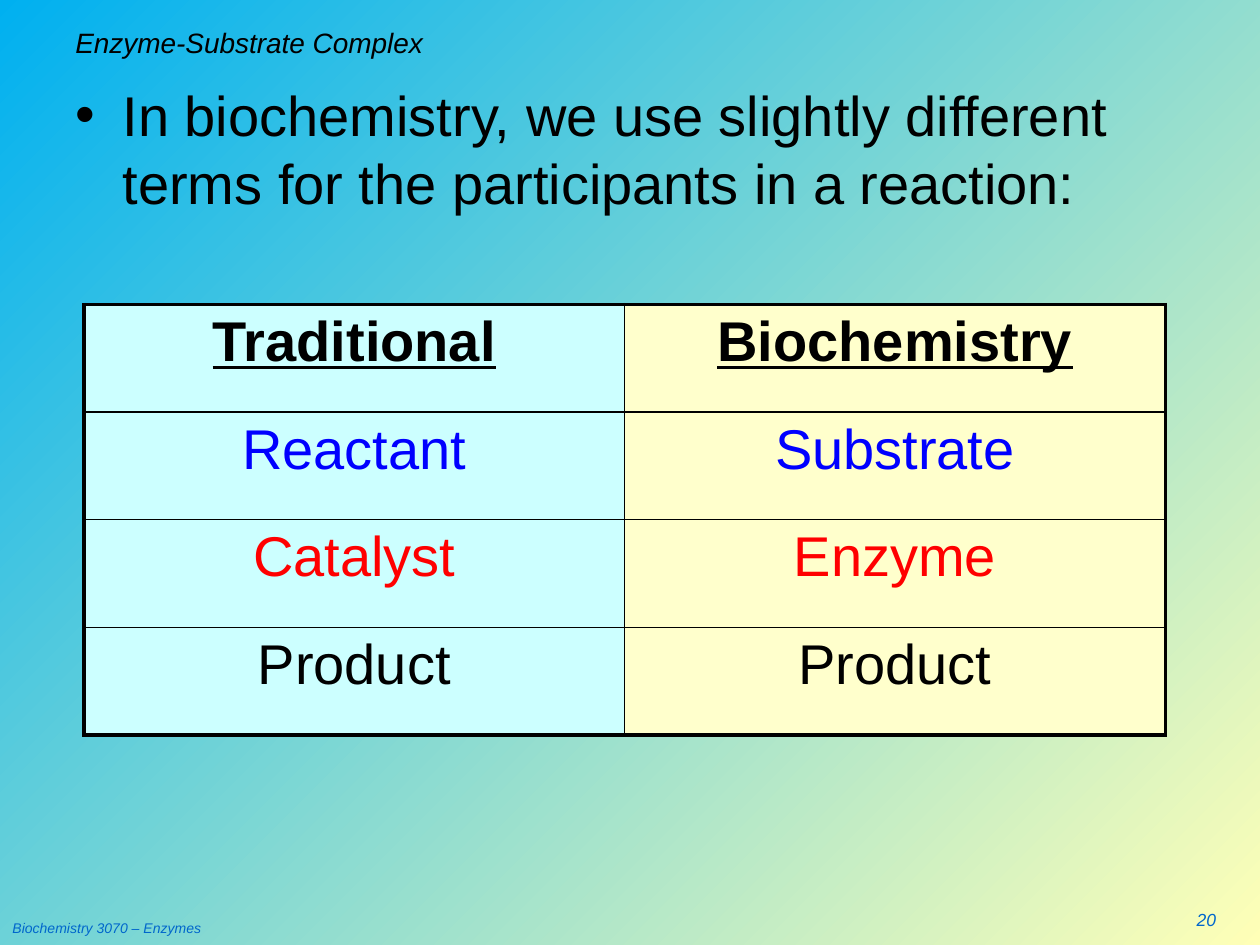
from lxml.etree import SubElement
from pptx import Presentation
from pptx.dml.color import RGBColor
from pptx.enum.text import MSO_ANCHOR as Anchor, PP_ALIGN as Align
from pptx.oxml.ns import qn
from pptx.util import Pt

BLACK, BLUE, RED, FOOTER_BLUE = "000000", "0000FF", "FF0000", "0066CC"
COLUMN_FILLS = ["CCFFFF", "FFFFCC"]
TERMS = [
    ("Traditional", "Biochemistry", BLACK),
    ("Reactant", "Substrate", BLUE),
    ("Catalyst", "Enzyme", RED),
    ("Product", "Product", BLACK),
]
OUTER_LINE, INNER_LINE = 2.25, 1


def color(hex_string):
    return RGBColor.from_string(hex_string)


def style_font(para, size, hex_string, italic=False, bold=False, underline=False):
    for span in para.runs:
        font = span.font
        font.name, font.size = "Arial", Pt(size)
        font.italic, font.bold, font.underline = italic, bold, underline
        font.color.rgb = color(hex_string)


def add_text(page, box, text, size, hex_string, italic=False,
             align=Align.LEFT, anchor=Anchor.TOP):
    frame = page.shapes.add_textbox(*map(Pt, box)).text_frame
    frame.word_wrap = True
    frame.vertical_anchor = anchor
    frame.text = text
    para = frame.paragraphs[0]
    para.alignment = align
    style_font(para, size, hex_string, italic)
    return para


def paint_background(page):
    fill = page.background.fill
    fill.gradient()
    fill.gradient_angle = 315
    for stop, position, shade in zip(fill.gradient_stops, (0, 1), ("00B0F0", "FFFFB7")):
        stop.position = position
        stop.color.rgb = color(shade)


def add_bullet(page, box, text):
    para = add_text(page, box, text, 32, BLACK)
    para.line_spacing = Pt(39)
    properties = para._p.get_or_add_pPr()
    properties.set("marL", str(Pt(27)))
    properties.set("indent", str(Pt(-27)))
    SubElement(properties, qn("a:buFont"), typeface="Arial")
    SubElement(properties, qn("a:buChar"), char="•")


def set_borders(cell, widths):
    """Draw the left, right, top and bottom borders, in that order, before the fill."""
    properties = cell._tc.get_or_add_tcPr()
    for side, width in zip("LRTB", widths):
        line = SubElement(properties, qn(f"a:ln{side}"), w=str(Pt(width)))
        SubElement(SubElement(line, qn("a:solidFill")), qn("a:srgbClr"), val=BLACK)


def add_terms_table(page, box):
    last_row, last_column = len(TERMS) - 1, len(COLUMN_FILLS) - 1
    table = page.shapes.add_table(last_row + 1, last_column + 1, *map(Pt, box)).table
    for row, (*words, text_color) in enumerate(TERMS):
        for column, word in enumerate(words):
            cell = table.cell(row, column)
            edges = (column == 0, column == last_column, row == 0, row == last_row)
            set_borders(cell, [OUTER_LINE if edge else INNER_LINE for edge in edges])
            cell.fill.solid()
            cell.fill.fore_color.rgb = color(COLUMN_FILLS[column])
            cell.text_frame.text = word
            para = cell.text_frame.paragraphs[0]
            para.alignment = Align.CENTER
            header = row == 0
            style_font(para, 32, text_color, bold=header, underline=header)


def add_footer(page, box, text, number):
    left, top, width, height = box
    add_text(page, (left, top + 6, 228, height - 6), text, 8, FOOTER_BLUE, italic=True)
    add_text(page, (left + width - 42, top, 42, height), number, 10, FOOTER_BLUE,
             italic=True, align=Align.RIGHT)


def main():
    deck = Presentation()
    deck.slide_width, deck.slide_height = Pt(720), Pt(540)
    page = deck.slides.add_slide(deck.slide_layouts[6])
    paint_background(page)
    add_footer(page, (0, 516, 702, 24), "Biochemistry 3070 – Enzymes", "20")
    add_text(page, (36, 12, 648, 24), "Enzyme-Substrate Complex", 16, BLACK,
             italic=True, anchor=Anchor.MIDDLE)
    add_bullet(page, (36, 42, 660, 440),
               "In biochemistry, we use slightly different terms "
               "for the participants in a reaction:")
    add_terms_table(page, (48, 174, 618, 246))
    deck.save("out.pptx")


if __name__ == "__main__":
    main()
